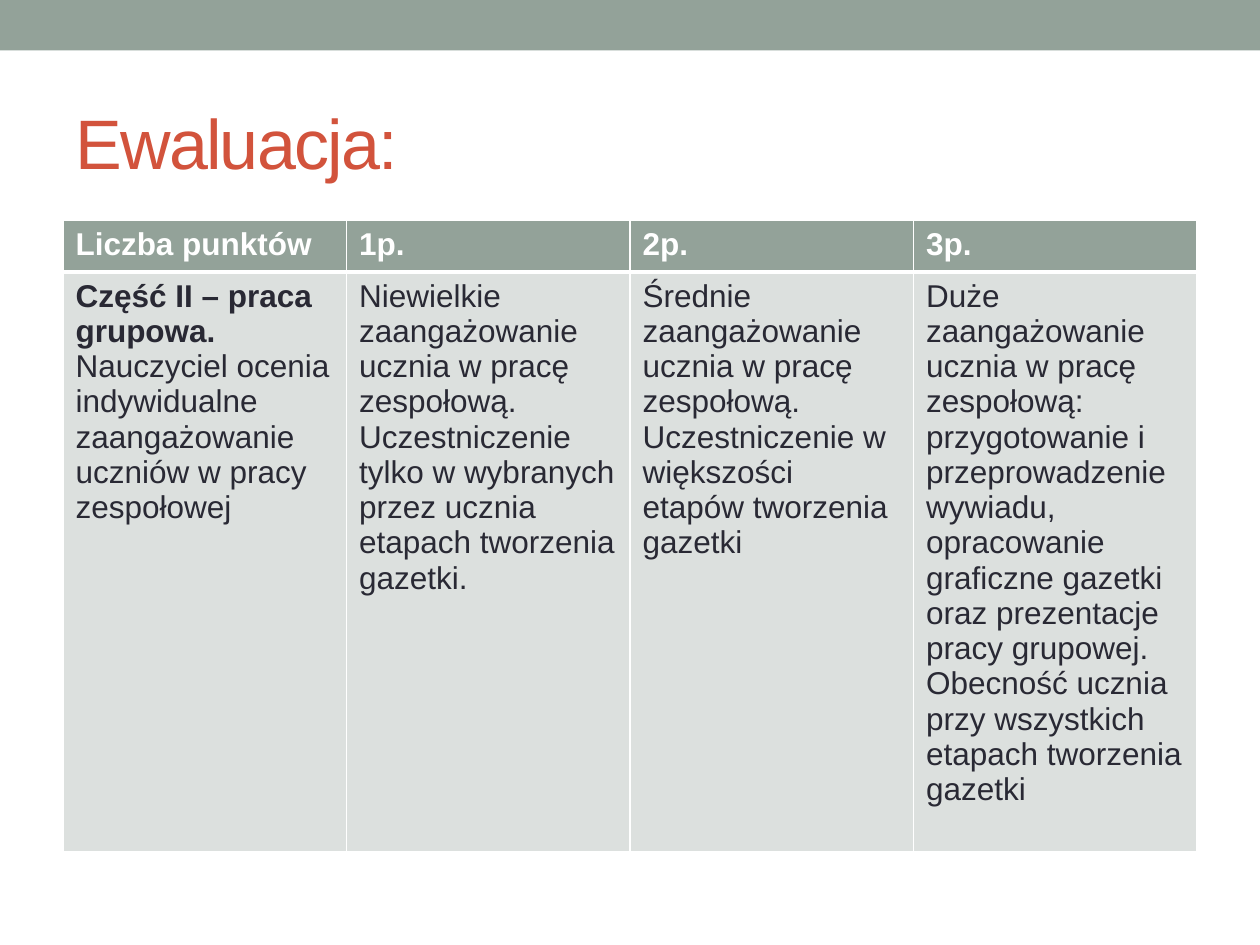
import dataclasses

import pptx
import pptx.dml.color
import pptx.enum.shapes
import pptx.enum.text
import pptx.oxml.ns
import pptx.util
from lxml import etree
from pptx.util import Inches

SAGE, MIST, WHITE, INK, BRICK = "93A299", "DCE0DE", "FFFFFF", "292934", "D2533C"


@dataclasses.dataclass(frozen=True)
class Level:
    """Describe one column of the grading scale."""
    heading: str
    criteria: str
    lead: str = ""


LEVELS = (
    Level("Liczba punktów",
          "Nauczyciel ocenia indywidualne zaangażowanie uczniów w pracy zespołowej",
          lead="Część II – praca grupowa. "),
    Level("1p.", "Niewielkie zaangażowanie ucznia w pracę zespołową. Uczestniczenie tylko "
          "w wybranych przez ucznia etapach tworzenia gazetki."),
    Level("2p.", "Średnie zaangażowanie ucznia w pracę zespołową. Uczestniczenie "
          "w większości etapów tworzenia gazetki"),
    Level("3p.", "Duże zaangażowanie ucznia w pracę zespołową: przygotowanie "
          "i przeprowadzenie wywiadu, opracowanie graficzne gazetki oraz prezentacje pracy "
          "grupowej. Obecność ucznia przy wszystkich etapach tworzenia gazetki"),
)


def paint(target, colour: str) -> None:
    """Give a fill or a line format a solid colour."""
    target.solid()
    target.fore_color.rgb = pptx.dml.color.RGBColor.from_string(colour)


def write(para, text: str, *, size: float = 18, colour: str = INK,
          bold: bool = False, spacing: float = 0) -> None:
    """Append a formatted span to a paragraph."""
    span = para.add_run()
    span.text = text
    span.font.name = "Arial"
    span.font.size = pptx.util.Pt(size)
    span.font.bold = bold
    paint(span.font.fill, colour)
    if spacing:
        span.font._element.set("spc", str(round(spacing * 100)))


def style_cell(cell, colour: str, bottom: float, top: float) -> None:
    """Draw white borders of the given widths in points and fill a cell."""
    properties = cell._tc.get_or_add_tcPr()
    for side, width in (("L", 1), ("R", 1), ("T", top), ("B", bottom)):
        border = etree.SubElement(properties, pptx.oxml.ns.qn(f"a:ln{side}"),
                                  w=str(pptx.util.Pt(width)))
        solid = etree.SubElement(border, pptx.oxml.ns.qn("a:solidFill"))
        etree.SubElement(solid, pptx.oxml.ns.qn("a:srgbClr"), val=WHITE)
    paint(cell.fill, colour)


def add_banner(page) -> None:
    """Draw the band across the top of the page."""
    band = page.shapes.add_shape(pptx.enum.shapes.MSO_SHAPE.RECTANGLE,
                                 0, 0, Inches(10), Inches(0.4))
    band.shadow.inherit = False
    paint(band.fill, SAGE)
    band.line.fill.background()


def add_title(page, text: str) -> None:
    """Place the page title."""
    box = page.shapes.add_textbox(Inches(0.5), Inches(0.58), Inches(9), Inches(1.08))
    box.text_frame.word_wrap = True
    box.text_frame.vertical_anchor = pptx.enum.text.MSO_ANCHOR.MIDDLE
    write(box.text_frame.paragraphs[0], text, size=40, colour=BRICK, spacing=-1)


def add_scale(page, levels: tuple[Level, ...]) -> None:
    """Lay out the grading scale as a table with one column per level."""
    table = page.shapes.add_table(2, len(levels), Inches(0.5), Inches(1.75),
                                  Inches(9), Inches(4.7)).table
    table.horz_banding = False
    table.rows[0].height, table.rows[1].height = Inches(0.41), Inches(4.29)
    for column, level in enumerate(levels):
        heading, criteria = table.cell(0, column), table.cell(1, column)
        style_cell(heading, SAGE, bottom=3, top=1)
        style_cell(criteria, MIST, bottom=1, top=3)
        write(heading.text_frame.paragraphs[0], level.heading, colour=WHITE, bold=True)
        para = criteria.text_frame.paragraphs[0]
        if level.lead:
            write(para, level.lead, bold=True)
        write(para, level.criteria)


def main() -> None:
    """Build and save the deck."""
    deck = pptx.Presentation()
    deck.slide_width, deck.slide_height = Inches(10), Inches(7.5)
    page = deck.slides.add_slide(deck.slide_layouts[6])
    paint(page.background.fill, WHITE)
    add_banner(page)
    add_title(page, "Ewaluacja:")
    add_scale(page, LEVELS)
    deck.save("out.pptx")


if __name__ == "__main__":
    main()
